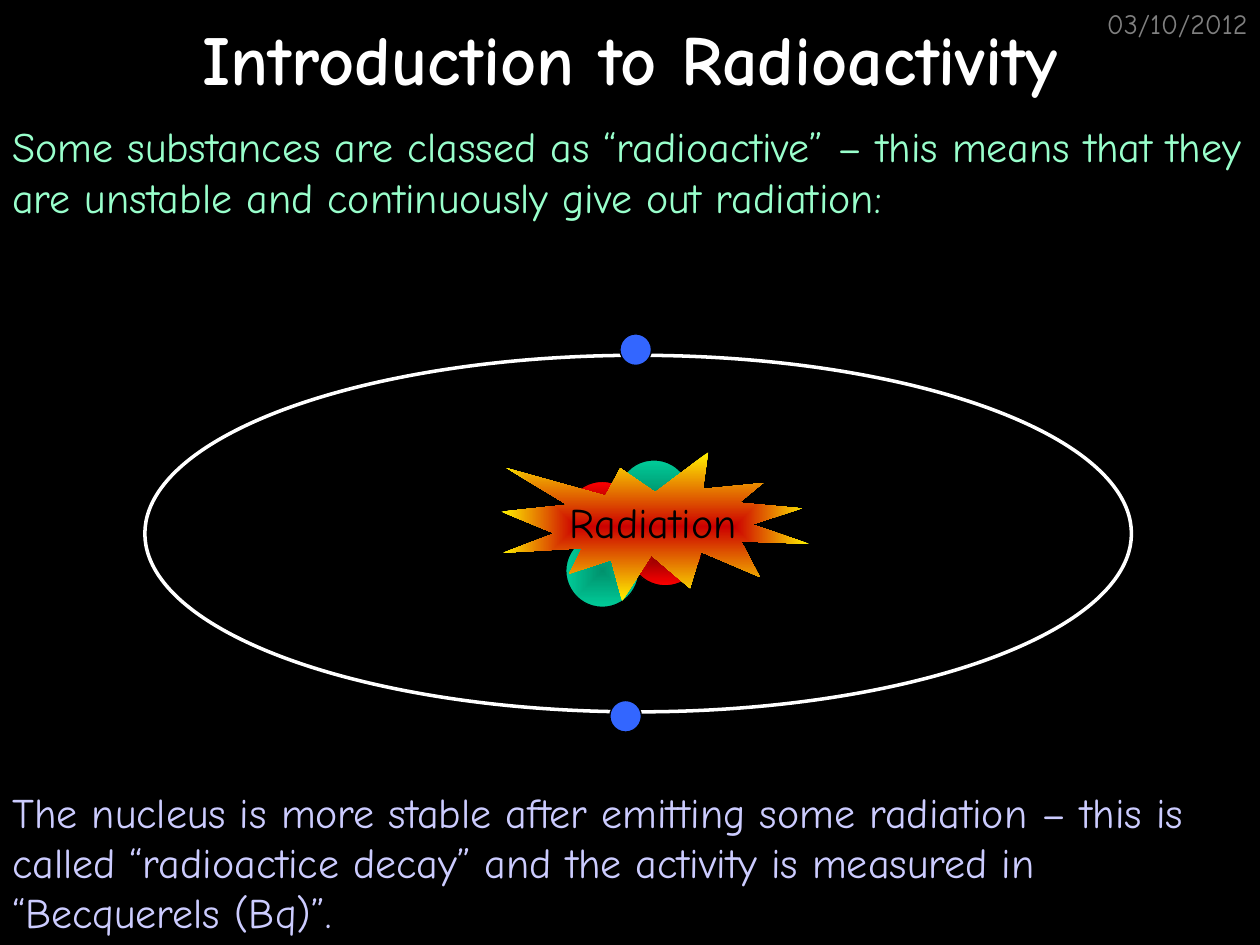
from lxml.etree import SubElement
from pptx import Presentation
from pptx.dml.color import RGBColor
from pptx.enum.shapes import MSO_SHAPE
from pptx.enum.text import MSO_ANCHOR, PP_ALIGN
from pptx.oxml.ns import qn
from pptx.util import Pt

SCALE = 9144
FONT = "Comic Neue"
COLORS = {
    "black": "000000", "white": "FFFFFF", "grey": "808080",
    "mint": "99FFCC", "lilac": "CCCCFF", "blue": "3366FF",
    "dark_green": "00926D", "green": "00CC99",
    "dark_red": "760000", "red": "FF0000",
    "flame": "CC0000", "yellow": "FFF200",
}


def color(name):
    """Return the named colour."""
    return RGBColor.from_string(COLORS[name])


def emu(box):
    """Turn a box in px into EMU."""
    return [length * SCALE for length in box]


def write(shape, text, size, ink, align=PP_ALIGN.LEFT, anchor=MSO_ANCHOR.TOP, bold=False, wrap=True):
    """Write one formatted paragraph into a shape."""
    frame = shape.text_frame
    frame.text = text
    frame.word_wrap = wrap
    frame.vertical_anchor = anchor
    para = frame.paragraphs[0]
    para.alignment = align
    span = para.runs[0]
    span.font.name = FONT
    span.font.size = Pt(size)
    span.font.bold = bold
    span.font.color.rgb = color(ink)


def add_text(page, box, text, size, ink, **layout):
    """Add a text box."""
    write(page.shapes.add_textbox(*emu(box)), text, size, ink, **layout)


def add_figure(shapes, kind, box, fill=None, line=None, width=0.75):
    """Add a preset shape with a plain, centred-gradient or empty fill."""
    shape = shapes.add_shape(kind, *emu(box))
    shape.shadow.inherit = False
    if fill is None:
        shape.fill.background()
    elif isinstance(fill, str):
        shape.fill.solid()
        shape.fill.fore_color.rgb = color(fill)
    else:
        shape.fill.gradient()
        for stop, name in zip(shape.fill.gradient_stops, fill):
            stop.color.rgb = color(name)
        gradient = shape.element.spPr.find(qn("a:gradFill"))
        gradient.remove(gradient.find(qn("a:lin")))
        shade = SubElement(gradient, qn("a:path"), {"path": "shape"})
        SubElement(shade, qn("a:fillToRect"), dict.fromkeys("ltrb", "50000"))
    if line:
        shape.line.color.rgb = color(line)
        shape.line.width = Pt(width)
    else:
        shape.line.fill.background()
    return shape


def add_header(page, box):
    """Place the date and the title."""
    left, top, width, height = box
    add_text(page, (left + width - 208, top, 208, 50), "03/10/2012", 16, "grey",
             align=PP_ALIGN.RIGHT)
    add_text(page, box, "Introduction to Radioactivity", 40, "white",
             align=PP_ALIGN.CENTER, anchor=MSO_ANCHOR.MIDDLE, bold=True)


def add_nucleus(page, box):
    """Place the four grouped nucleons."""
    left, top, _, _ = box
    green, red = ("dark_green", "green"), ("dark_red", "red")
    group = page.shapes.add_group_shape()
    for x, y, fill in ((41, 0, green), (0, 17, red), (50, 42, red), (0, 59, green)):
        add_figure(group.shapes, MSO_SHAPE.OVAL, (left + x, top + y, 58, 58), fill, "black")


def add_atom(page, box):
    """Place the nucleus, the orbit and its electrons."""
    left, top, _, _ = box
    add_nucleus(page, (left + 334, top + 83, 108, 117))
    add_figure(page.shapes, MSO_SHAPE.OVAL, box, line="white", width=2)
    for x, y in ((369, 274), (377, -17)):
        add_figure(page.shapes, MSO_SHAPE.OVAL, (left + x, top + y, 25, 25), "blue", "black")


def add_burst(page, box):
    """Place the radiation burst."""
    burst = add_figure(page.shapes, MSO_SHAPE.EXPLOSION1, box, ("flame", "yellow"))
    write(burst, "Radiation", 24, "black", PP_ALIGN.CENTER, MSO_ANCHOR.MIDDLE, wrap=False)


def main():
    """Build and save the slide."""
    deck = Presentation()
    deck.slide_width, deck.slide_height = emu((1000, 750))
    page = deck.slides.add_slide(deck.slide_layouts[6])
    page.background.fill.solid()
    page.background.fill.fore_color.rgb = color("black")
    add_header(page, (0, 0, 1000, 92))
    add_atom(page, (115, 282, 783, 283))
    add_text(page, (0, 91, 1000, 90),
             "Some substances are classed as “radioactive” – this means that they "
             "are unstable and continuously give out radiation:", 24, "mint")
    add_burst(page, (398, 359, 244, 118))
    add_text(page, (0, 619, 1000, 130),
             "The nucleus is more stable after emitting some radiation – this is "
             "called “radioactice decay” and the activity is measured in "
             "“Becquerels (Bq)”.", 24, "lilac")
    deck.save("out.pptx")


if __name__ == "__main__":
    main()
